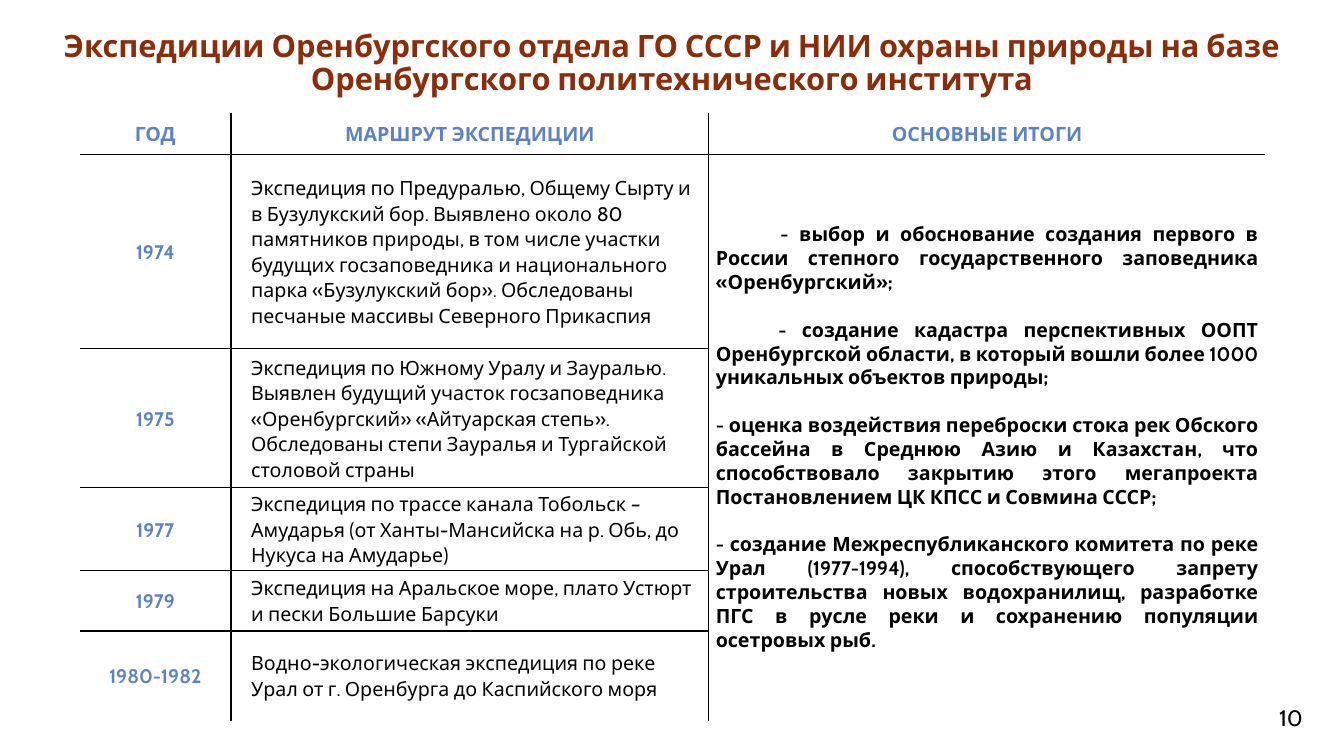
from dataclasses import dataclass

from lxml.etree import SubElement
from pptx import Presentation
from pptx.dml.color import RGBColor
from pptx.enum.text import MSO_ANCHOR, PP_ALIGN
from pptx.oxml.ns import qn
from pptx.slide import Slide
from pptx.table import Table, _Cell
from pptx.text.text import TextFrame
from pptx.util import Inches, Pt

PAGE_WIDTH = Inches(13.33)
PAGE_HEIGHT = Inches(7.5)
FONT = "Cabin"
COLORS = {"title": "8B2C0A", "accent": "5C82C5", "ink": "000000"}
COLUMN_SHARES = [11.25, 35.56, 41.41]
ROW_SHARES = [5.47, 25.73, 18.4, 10.93, 8, 11.87]
TABLE_LEFT, TABLE_TOP = 5.93, 14.93
OUTCOME_COLUMN = len(COLUMN_SHARES) - 1


@dataclass(frozen=True)
class Area:
    left: float
    top: float
    width: float
    height: float


@dataclass(frozen=True)
class Expedition:
    year: str
    route: str


@dataclass(frozen=True)
class Outcome:
    text: str
    first_line: float = 0


TITLE = (
    "Экспедиции Оренбургского отдела ГО СССР и НИИ охраны природы на базе "
    "Оренбургского политехнического института"
)
HEADINGS = ["ГОД", "МАРШРУТ ЭКСПЕДИЦИИ", "ОСНОВНЫЕ ИТОГИ"]
EXPEDITIONS = [
    Expedition(
        "1974",
        "Экспедиция по Предуралью, Общему Сырту и в Бузулукский бор. Выявлено около 80 "
        "памятников природы, в том числе участки будущих госзаповедника и национального "
        "парка «Бузулукский бор». Обследованы песчаные массивы Северного Прикаспия",
    ),
    Expedition(
        "1975",
        "Экспедиция по Южному Уралу и Зауралью. Выявлен будущий участок госзаповедника "
        "«Оренбургский» «Айтуарская степь». Обследованы степи Зауралья и Тургайской "
        "столовой страны",
    ),
    Expedition(
        "1977",
        "Экспедиция по трассе канала Тобольск – Амударья (от Ханты-Мансийска на р. Обь, "
        "до Нукуса на Амударье)",
    ),
    Expedition("1979", "Экспедиция на Аральское море, плато Устюрт и пески Большие Барсуки"),
    Expedition(
        "1980-1982",
        "Водно-экологическая экспедиция по реке Урал от г. Оренбурга до Каспийского моря",
    ),
]
OUTCOMES = [
    Outcome(
        "- выбор и обоснование создания первого в России степного государственного "
        "заповедника «Оренбургский»;",
        4.8,
    ),
    Outcome(
        "- создание кадастра перспективных ООПТ Оренбургской области, в который вошли "
        "более 1000 уникальных объектов природы;",
        4.65,
    ),
    Outcome(
        "- оценка воздействия переброски стока рек Обского бассейна в Среднюю Азию и "
        "Казахстан, что способствовало закрытию этого мегапроекта Постановлением ЦК КПСС "
        "и Совмина СССР;"
    ),
    Outcome(
        "- создание Межреспубликанского комитета по реке Урал (1977-1994), способствующего "
        "запрету строительства новых водохранилищ, разработке ПГС в русле реки и "
        "сохранению популяции осетровых рыб."
    ),
]


def across(share: float) -> int:
    return round(PAGE_WIDTH * share / 100)


def down(share: float) -> int:
    return round(PAGE_HEIGHT * share / 100)


def write(
    frame: TextFrame,
    text: str,
    *,
    size: float = 14,
    color: str = "ink",
    bold: bool = False,
    align: PP_ALIGN = PP_ALIGN.CENTER,
    spacing: float = 1.0,
    before: float = 0,
    margin: float = 0,
    first_line: float = 0,
) -> None:
    para = frame.paragraphs[0] if not frame.text else frame.add_paragraph()
    para.alignment = align
    para.line_spacing = spacing
    if before:
        para.space_before = Pt(before)
    properties = para._p.get_or_add_pPr()
    properties.set("marL", str(across(margin)))
    properties.set("indent", str(across(first_line)))
    span = para.add_run()
    span.text = text
    span.font.name = FONT
    span.font.size = Pt(size)
    span.font.bold = bold
    span.font.color.rgb = RGBColor.from_string(COLORS[color])


def add_text(page: Slide, area: Area, text: str, **style) -> None:
    box = page.shapes.add_textbox(
        across(area.left), down(area.top), across(area.width), down(area.height)
    )
    box.text_frame.word_wrap = True
    write(box.text_frame, text, **style)


def style_cell(cell: _Cell, row: int, column: int) -> None:
    cell.vertical_anchor = MSO_ANCHOR.MIDDLE
    cell.margin_left = cell.margin_right = Inches(0.07)
    cell.margin_top = cell.margin_bottom = 0
    ruled = column < OUTCOME_COLUMN
    edges = {
        "a:lnL": column > 0,
        "a:lnR": ruled,
        "a:lnT": row == 1 or (row > 1 and ruled),
        "a:lnB": row == 0 or (row < len(EXPEDITIONS) and ruled),
    }
    properties = cell._tc.get_or_add_tcPr()
    for tag, visible in edges.items():
        line = SubElement(properties, qn(tag), w=str(Pt(1)))
        if visible:
            fill = SubElement(line, qn("a:solidFill"))
            SubElement(fill, qn("a:srgbClr"), val=COLORS["ink"])
        else:
            SubElement(line, qn("a:noFill"))
    cell.fill.background()


def add_grid(page: Slide) -> Table:
    grid = page.shapes.add_table(
        len(ROW_SHARES),
        len(COLUMN_SHARES),
        across(TABLE_LEFT),
        down(TABLE_TOP),
        across(sum(COLUMN_SHARES)),
        down(sum(ROW_SHARES)),
    ).table
    grid.first_row = grid.horz_banding = False
    for column, share in zip(grid.columns, COLUMN_SHARES):
        column.width = across(share)
    for row, share in zip(grid.rows, ROW_SHARES):
        row.height = down(share)
    for row in range(len(ROW_SHARES)):
        for column in range(len(COLUMN_SHARES)):
            style_cell(grid.cell(row, column), row, column)
    grid.cell(1, OUTCOME_COLUMN).merge(grid.cell(len(EXPEDITIONS), OUTCOME_COLUMN))
    return grid


def fill_grid(grid: Table) -> None:
    label = {"color": "accent", "bold": True, "spacing": 1.07}
    for column, heading in enumerate(HEADINGS):
        write(grid.cell(0, column).text_frame, heading, **label)
    for row, trip in enumerate(EXPEDITIONS, start=1):
        write(grid.cell(row, 0).text_frame, trip.year, **label)
        write(
            grid.cell(row, 1).text_frame,
            trip.route,
            align=PP_ALIGN.LEFT,
            spacing=1.07,
            margin=0.98,
        )
    frame = grid.cell(1, OUTCOME_COLUMN).text_frame
    for index, outcome in enumerate(OUTCOMES):
        write(frame, outcome.text, bold=True, align=PP_ALIGN.JUSTIFY,
              before=17 if index else 0, first_line=outcome.first_line)


def main() -> None:
    deck = Presentation()
    deck.slide_width, deck.slide_height = PAGE_WIDTH, PAGE_HEIGHT
    page = deck.slides.add_slide(deck.slide_layouts[6])
    add_text(page, Area(0, 3.47, 100, 10.27), TITLE,
             size=22, color="title", bold=True, spacing=0.9)
    fill_grid(add_grid(page))
    add_text(page, Area(92.12, 92.53, 7.88, 4.93), "10", size=16)
    deck.save("out.pptx")


if __name__ == "__main__":
    main()
